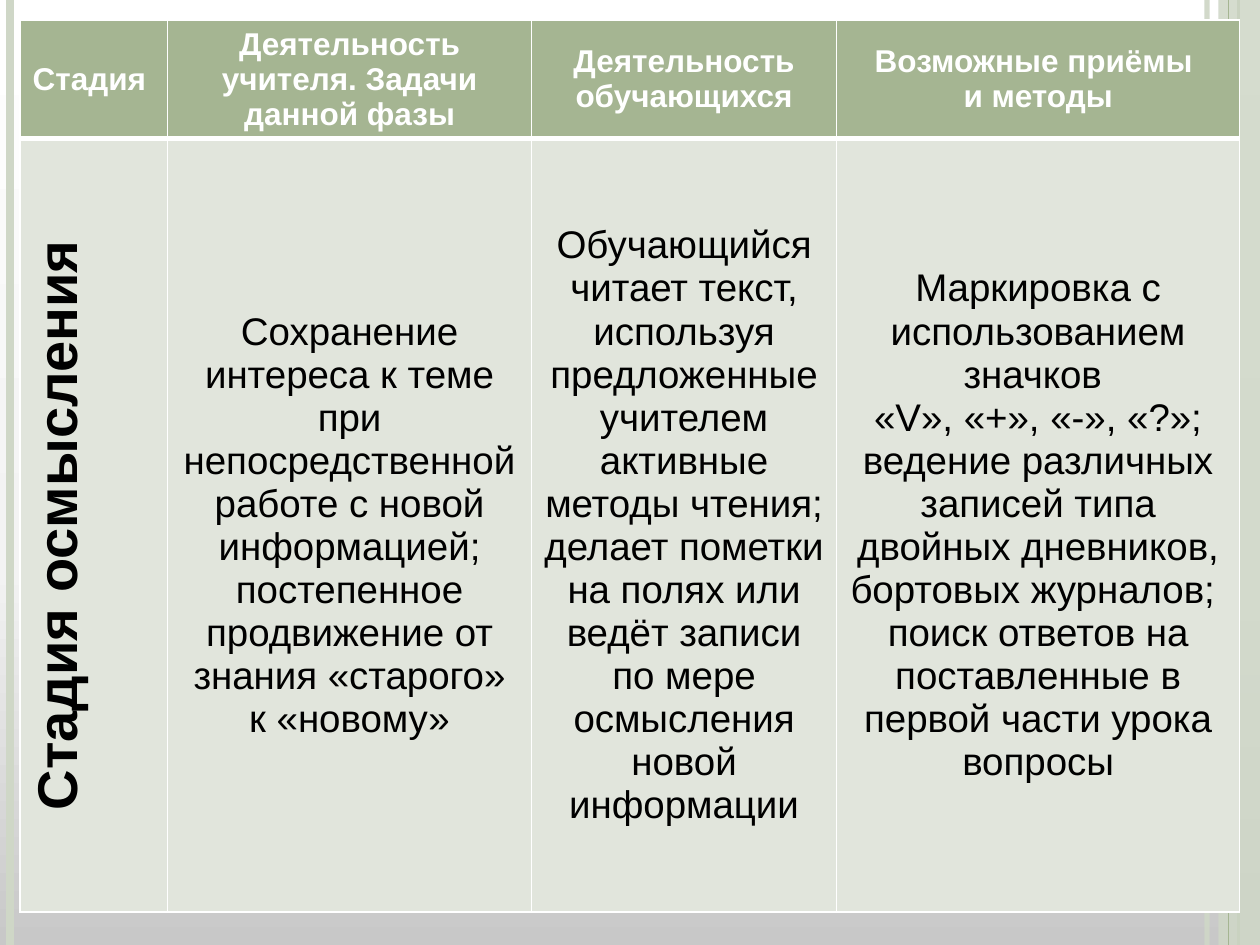
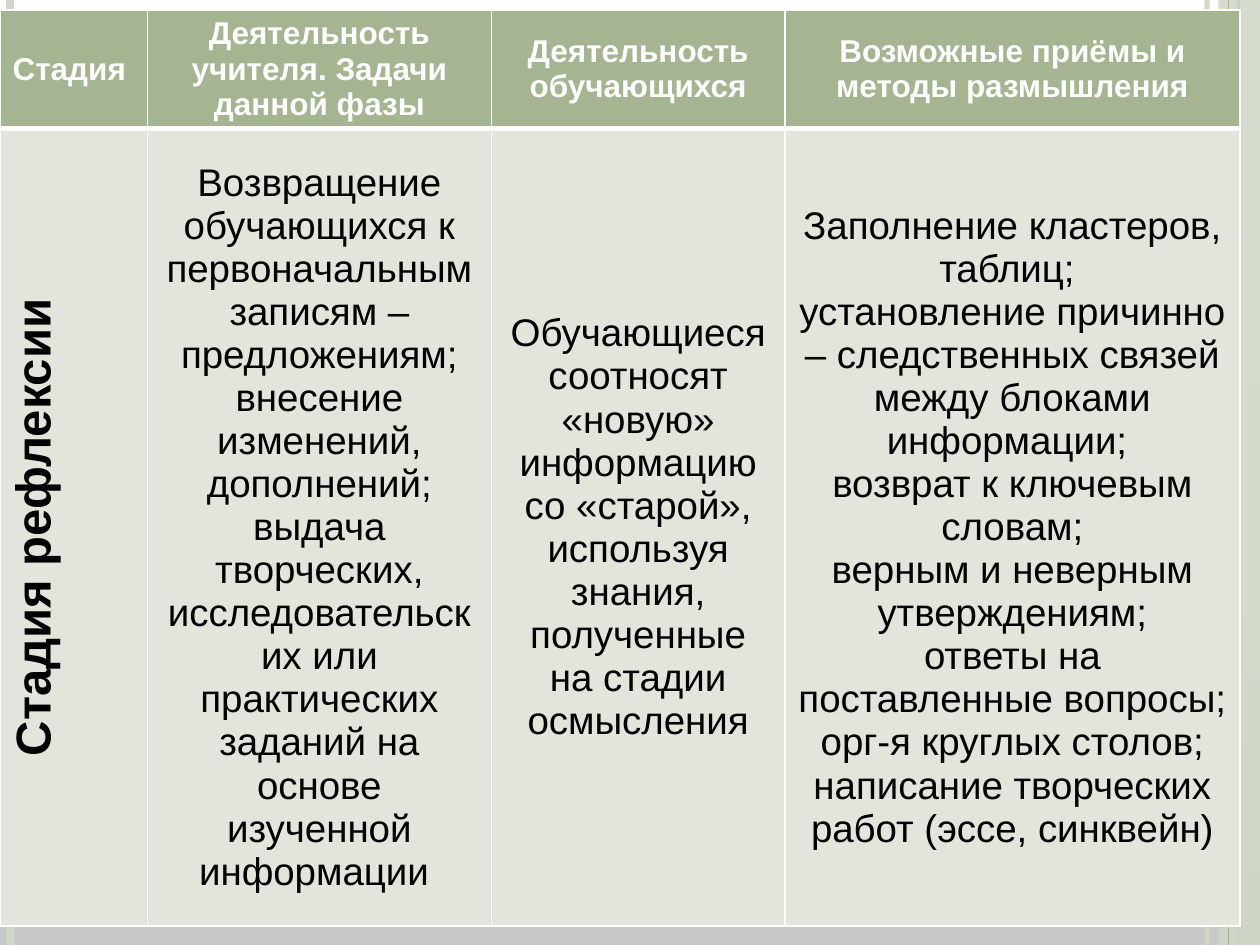
from copy import deepcopy
from dataclasses import dataclass

from pptx import Presentation
from pptx.dml.color import RGBColor
from pptx.enum.shapes import MSO_CONNECTOR, MSO_SHAPE
from pptx.enum.text import MSO_ANCHOR, PP_ALIGN
from pptx.oxml.ns import qn
from pptx.oxml.xmlchemy import OxmlElement
from pptx.util import Inches, Pt

STRAIGHT = MSO_CONNECTOR.STRAIGHT
RECTANGLE = MSO_SHAPE.RECTANGLE
MIDDLE = MSO_ANCHOR.MIDDLE
CENTER = PP_ALIGN.CENTER

# Content: one table per slide, cells hold lists of paragraphs
HEADERS = [
    ["Стадия "],
    ["Деятельность учителя. Задачи данной фазы"],
    ["Деятельность обучающихся"],
]
STAGES = [
    {
        "left": 0.16, "top": 0.16, "columns": [1.17, 2.89, 2.42, 3.2],
        "body_height": 6.14, "stage_size": 32,
        "methods_header": ["Возможные приёмы ", "и методы"],
        "body": [
            ["Стадия осмысления"],
            ["Сохранение интереса к теме при непосредственной работе с новой "
             "информацией; постепенное продвижение от знания «старого» к «новому»"],
            ["Обучающийся читает текст, используя предложенные учителем активные "
             "методы чтения; делает пометки на полях или ведёт записи по мере "
             "осмысления новой информации"],
            ["Маркировка с использованием значков ",
             "«V», «+», «-», «?»;",
             "ведение различных записей типа двойных дневников, бортовых журналов; ",
             "поиск ответов на поставленные в первой части урока вопросы"],
        ],
    },
    {
        "left": 0, "top": 0.08, "columns": [1.17, 2.73, 2.33, 3.61],
        "body_height": 6.33, "stage_size": 28,
        "methods_header": ["Возможные приёмы и методы размышления"],
        "body": [
            ["Стадия рефлексии"],
            ["Возвращение обучающихся к первоначальным записям – предложениям; "
             "внесение изменений, дополнений; выдача творческих, исследовательских "
             "или практических заданий на основе изученной информации "],
            ["Обучающиеся соотносят «новую» информацию со «старой», используя "
             "знания, полученные на стадии осмысления"],
            ["Заполнение кластеров, таблиц; ",
             "установление причинно – следственных связей между блоками информации; ",
             "возврат к ключевым словам;",
             "верным и неверным утверждениям;",
             "ответы на поставленные вопросы;",
             "орг-я круглых столов;",
             "написание творческих работ (эссе, синквейн)"],
        ],
    },
]


@dataclass(frozen=True)
class Theme:
    font: str = "Arial"
    green: str = "A5B592"
    pale_green: str = "CFD7C7"
    cell: str = "E1E5DC"
    white: str = "FFFFFF"
    black: str = "000000"
    backdrop: tuple = ((0, "C8C8C8"), (0.4, "F3F3F3"), (1, "FFFFFF"))
    header_size: int = 18
    body_size: int = 22
    thin: int = 1
    thick: int = 3


THEME = Theme()
WIDTH, HEIGHT = 10, 7.5
HEADER_HEIGHT = 0.93
BAND_LEFT = 9.67
# Vertical rules: x, colour, width, opacity in percent
RULES_BEHIND = [(9.58, THEME.pale_green, 3, 93),
                (0.08, THEME.pale_green, 4.5, 100),
                (9.83, THEME.green, 1.5, 100)]
RULES_ABOVE = [(9.75, THEME.green, 0.75, 100)]


def color(code):
    return RGBColor.from_string(code)


def set_opacity(shape, percent):
    alpha = OxmlElement("a:alpha")
    alpha.set("val", str(percent * 1000))
    shape.element.spPr.find(".//" + qn("a:srgbClr")).append(alpha)


# Shared backdrop
def paint_background(master):
    fill = master.background.fill
    fill.gradient()
    fill.gradient_angle = 90
    stops = master.element.find(".//" + qn("a:gsLst"))
    stops.append(deepcopy(stops[-1]))
    for stop, (position, code) in zip(fill.gradient_stops, THEME.backdrop):
        stop.position = position
        stop.color.rgb = color(code)


def add_rule(page, x, code, width, opacity):
    rule = page.shapes.add_connector(
        STRAIGHT, Inches(x), 0, Inches(x), Inches(HEIGHT))
    rule.line.color.rgb = color(code)
    rule.line.width = Pt(width)
    set_opacity(rule, opacity)
    rule.element.spPr.append(OxmlElement("a:effectLst"))
    return rule


def add_band(page):
    band = page.shapes.add_shape(
        RECTANGLE, Inches(BAND_LEFT), 0, Inches(WIDTH - BAND_LEFT), Inches(HEIGHT))
    band.shadow.inherit = False
    band.fill.solid()
    band.fill.fore_color.rgb = color(THEME.pale_green)
    set_opacity(band, 87)
    band.line.fill.background()
    return band


def move_to_master(master, shapes):
    tree = master.element.cSld.spTree
    for index, shape in enumerate(shapes, start=2):
        tree.insert(index, shape.element)


# Table
def set_border(properties, side, width):
    line = OxmlElement(f"a:ln{side}")
    line.set("w", str(Pt(width)))
    fill = OxmlElement("a:solidFill")
    shade = OxmlElement("a:srgbClr")
    shade.set("val", THEME.white)
    fill.append(shade)
    line.append(fill)
    properties.append(line)


def fill_cell(cell, lines, fill, ink, size, bold, thick_side):
    properties = cell._tc.get_or_add_tcPr()
    for side in "LRTB":
        set_border(properties, side, THEME.thick if side == thick_side else THEME.thin)
    cell.fill.solid()
    cell.fill.fore_color.rgb = color(fill)
    cell.vertical_anchor = MIDDLE
    cell.text = "\n".join(lines)
    for para in cell.text_frame.paragraphs:
        para.alignment = CENTER
        para.font.name = THEME.font
        para.font.size = Pt(size)
        para.font.bold = bold
        para.font.color.rgb = color(ink)


def add_stage_table(page, stage):
    widths = stage["columns"]
    heights = [HEADER_HEIGHT, stage["body_height"]]
    table = page.shapes.add_table(
        len(heights), len(widths), Inches(stage["left"]), Inches(stage["top"]),
        Inches(sum(widths)), Inches(sum(heights))).table
    for row, height in zip(table.rows, heights):
        row.height = Inches(height)
    headers = HEADERS + [stage["methods_header"]]
    for index, width in enumerate(widths):
        table.columns[index].width = Inches(width)
        is_stage = index == 0
        size = stage["stage_size"] if is_stage else THEME.body_size
        fill_cell(table.cell(0, index), headers[index], THEME.green, THEME.white,
                  THEME.header_size, True, "B")
        fill_cell(table.cell(1, index), stage["body"][index], THEME.cell, THEME.black,
                  size, is_stage, "T")
    table.cell(1, 0)._tc.get_or_add_tcPr().set("vert", "vert270")


def main():
    deck = Presentation()
    deck.slide_width, deck.slide_height = Inches(WIDTH), Inches(HEIGHT)
    master = deck.slide_master
    blank = deck.slide_layouts.get_by_name("Blank")
    pages = [deck.slides.add_slide(blank) for _ in STAGES]

    paint_background(master)
    decor = [add_rule(pages[0], *rule) for rule in RULES_BEHIND]
    decor.append(add_band(pages[0]))
    decor += [add_rule(pages[0], *rule) for rule in RULES_ABOVE]
    move_to_master(master, decor)

    for page, stage in zip(pages, STAGES):
        add_stage_table(page, stage)
    deck.save("out.pptx")


if __name__ == "__main__":
    main()
